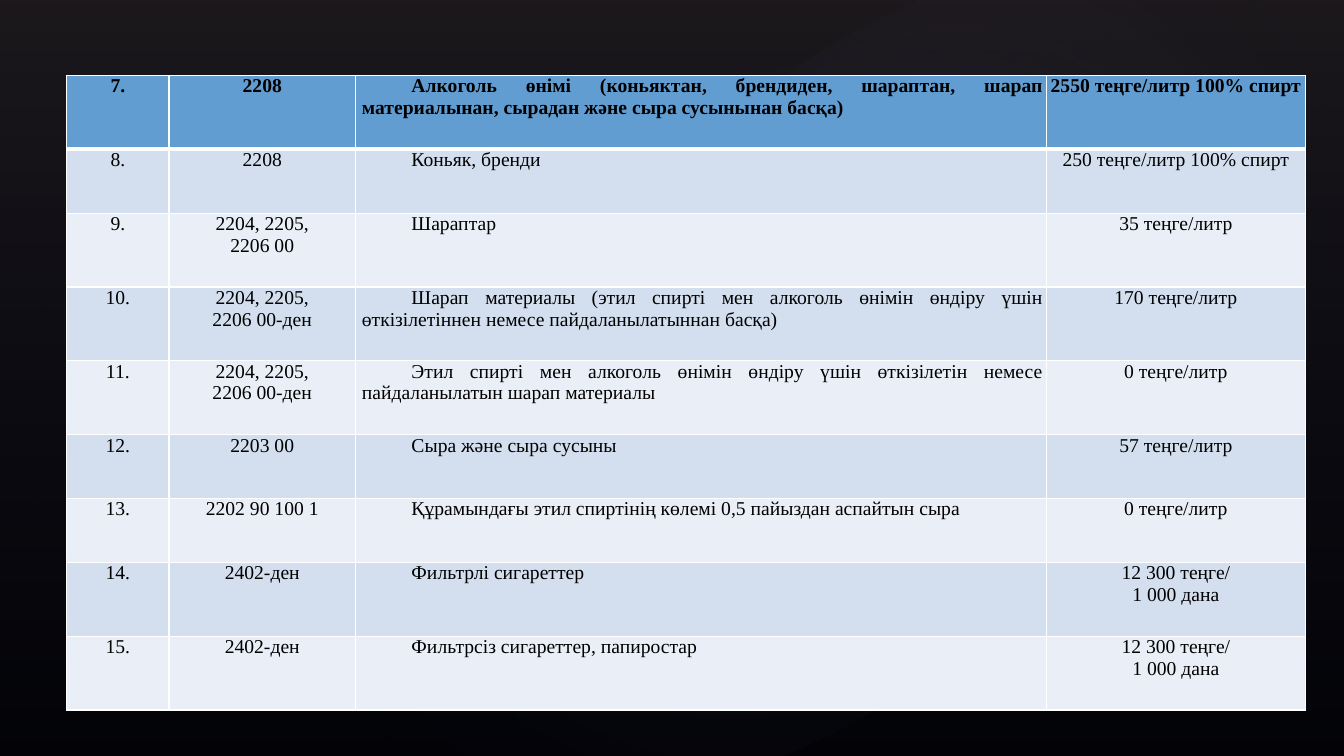
from lxml import etree
from pptx import Presentation
from pptx.dml.color import RGBColor
from pptx.enum.shapes import MSO_SHAPE
from pptx.enum.text import PP_ALIGN
from pptx.oxml.ns import qn
from pptx.util import Cm, Pt

CENTER = PP_ALIGN.CENTER
JUSTIFY = PP_ALIGN.JUSTIFY
RECTANGLE = MSO_SHAPE.RECTANGLE
OVAL = MSO_SHAPE.OVAL
FONT = "Times New Roman"
HEADER_FILL = "629DD1"
BAND_FILLS = ["EAEFF7", "D3DFEE"]
COLUMN_WIDTHS = [2.58, 4.7, 17.41, 6.53]
TALL_ROW, SHORT_ROW = 1.86, 1.61
SHORT_ROWS = [1, 5, 6]
DESCRIPTION_COLUMN = 2

BACKDROP = [
    (RECTANGLE, 0, 0, 33.87, 19.05, 0, "504652", 36, 100, 10),
    (OVAL, 5.08, 2.9, 26.82, 15.85, 328.7, "C4BCC6", 7, 58, 0),
    (OVAL, 1.55, 1.17, 15.39, 16.59, 294.3, "C4BCC6", 8, 58, 0),
    (OVAL, 12.14, 0.33, 24, 13.21, 328.7, "C4BCC6", 8, 58, 0),
]

EXCISE_RATES = [
    ("7.", "2208", "Алкоголь өнімі (коньяктан, брендиден, шараптан, шарап материалынан, "
     "сырадан және сыра сусынынан басқа)", "2550 теңге/литр 100% спирт"),
    ("8.", "2208", "Коньяк, бренди", "250 теңге/литр 100% спирт"),
    ("9.", "2204, 2205,\n2206 00", "Шараптар", "35 теңге/литр"),
    ("10.", "2204, 2205,\n2206 00-ден", "Шарап материалы (этил спирті мен алкоголь өнімін "
     "өндіру үшін өткізілетіннен немесе пайдаланылатыннан басқа)", "170 теңге/литр"),
    ("11.", "2204, 2205,\n2206 00-ден", "Этил спирті мен алкоголь өнімін өндіру үшін "
     "өткізілетін немесе пайдаланылатын шарап материалы", "0 теңге/литр"),
    ("12.", "2203 00", "Сыра және сыра сусыны", "57 теңге/литр"),
    ("13.", "2202 90 100 1", "Құрамындағы этил спиртінің көлемі 0,5 пайыздан аспайтын сыра",
     "0 теңге/литр"),
    ("14.", "2402-ден", "Фильтрлі сигареттер", "12 300 теңге/\n1 000 дана"),
    ("15.", "2402-ден", "Фильтрсіз сигареттер, папиростар", "12 300 теңге/\n1 000 дана"),
]


def color(value):
    return RGBColor.from_string(value)


def add_border(cell, side, points):
    line = etree.SubElement(cell._tc.get_or_add_tcPr(), qn(f"a:ln{side}"), w=str(Pt(points)))
    solid = etree.SubElement(line, qn("a:solidFill"))
    etree.SubElement(solid, qn("a:srgbClr"), val="FFFFFF")


deck = Presentation()
deck.slide_width = Cm(33.87)
deck.slide_height = Cm(19.05)
slide = deck.slides.add_slide(deck.slide_layouts[6])
slide.background.fill.solid()
slide.background.fill.fore_color.rgb = color("000000")

for kind, left, top, width, height, turn, tint, opacity, end, end_opacity in BACKDROP:
    glow = slide.shapes.add_shape(kind, Cm(left), Cm(top), Cm(width), Cm(height))
    glow.rotation = turn
    glow.shadow.inherit = False
    glow.line.fill.background()
    glow.fill.gradient()
    gradient = glow._element.spPr.find(qn("a:gradFill"))
    for child in list(gradient):
        gradient.remove(child)
    stops = etree.SubElement(gradient, qn("a:gsLst"))
    for position, shade, alpha in [(0, tint, opacity), (end, "242852", end_opacity)]:
        stop = etree.SubElement(stops, qn("a:gs"), pos=str(position * 1000))
        stop_color = etree.SubElement(stop, qn("a:srgbClr"), val=shade)
        etree.SubElement(stop_color, qn("a:alpha"), val=str(alpha * 1000))
    if kind == OVAL:
        radial = etree.SubElement(gradient, qn("a:path"), path="circle")
        etree.SubElement(radial, qn("a:fillToRect"), l="50000", t="50000", r="50000", b="50000")
    else:
        etree.SubElement(gradient, qn("a:lin"), ang="5400000", scaled="0")

table = slide.shapes.add_table(
    len(EXCISE_RATES), len(COLUMN_WIDTHS), Cm(1.68), Cm(1.9), Cm(31.22), Cm(15.99)
).table
for column, width in zip(table.columns, COLUMN_WIDTHS):
    column.width = Cm(width)

for row_number, rate in enumerate(EXCISE_RATES):
    is_header = row_number == 0
    table.rows[row_number].height = Cm(SHORT_ROW if row_number in SHORT_ROWS else TALL_ROW)
    for column_number, text in enumerate(rate):
        cell = table.cell(row_number, column_number)
        cell.margin_left = cell.margin_right = Cm(0.08)
        cell.margin_top = cell.margin_bottom = 0
        add_border(cell, "L", 1)
        add_border(cell, "R", 1)
        add_border(cell, "T", 3 if row_number == 1 else 1)
        add_border(cell, "B", 3 if is_header else 1)
        cell.fill.solid()
        cell.fill.fore_color.rgb = color(HEADER_FILL if is_header else BAND_FILLS[row_number % 2])
        cell.text_frame.text = text
        for para in cell.text_frame.paragraphs:
            para.alignment = CENTER
            if column_number == DESCRIPTION_COLUMN:
                para.alignment = JUSTIFY
                properties = para._p.get_or_add_pPr()
                properties.set("marL", str(Cm(0.08)))
                properties.set("indent", str(Cm(1.25)))
            for span in para.runs:
                span.font.name = FONT
                span.font.size = Pt(14)
                span.font.bold = is_header
                span.font.color.rgb = color("000000")

deck.save("out.pptx")
